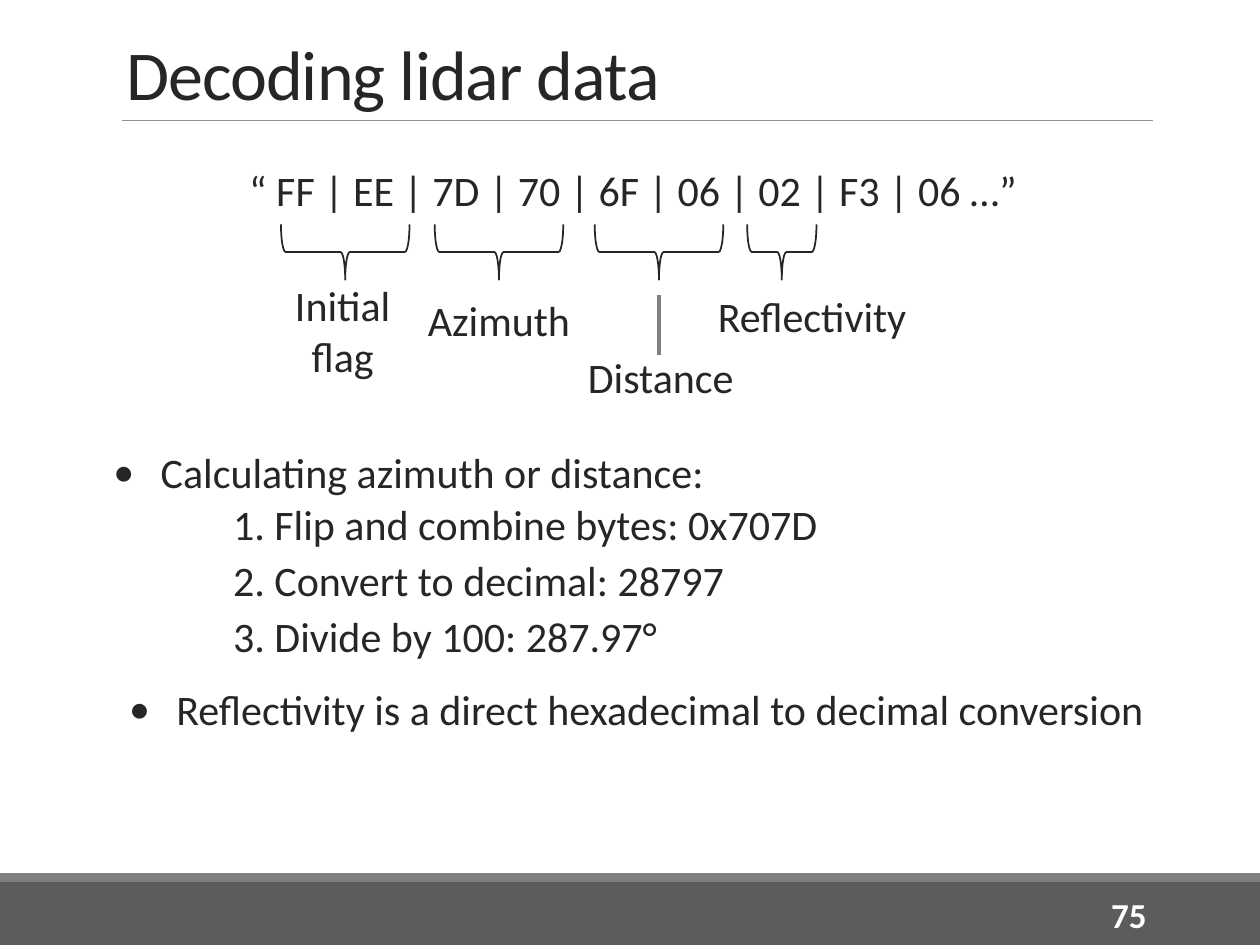
from collections import namedtuple

from lxml import etree
from pptx import Presentation
from pptx.dml.color import RGBColor
from pptx.enum.shapes import MSO_CONNECTOR, MSO_SHAPE
from pptx.enum.text import MSO_ANCHOR, MSO_AUTO_SIZE, PP_ALIGN
from pptx.oxml.ns import qn
from pptx.util import Inches, Pt

STRAIGHT = MSO_CONNECTOR.STRAIGHT
RECTANGLE, BRACE = MSO_SHAPE.RECTANGLE, MSO_SHAPE.LEFT_BRACE
TOP, MIDDLE, BOTTOM = MSO_ANCHOR.TOP, MSO_ANCHOR.MIDDLE, MSO_ANCHOR.BOTTOM
LEFT, CENTER, RIGHT = PP_ALIGN.LEFT, PP_ALIGN.CENTER, PP_ALIGN.RIGHT

COLORS = {"ink": "262626", "bar": "5C5C5C", "stripe": "7F7F7F",
          "rule": "929292", "white": "FFFFFF"}
FONT = "Calibri"
COLUMNS, ROWS = 100, 75  # square cells over the whole slide
CELL = Inches(10) / COLUMNS

Box = namedtuple("Box", "left top width height")


def cells(*counts):
    return [round(count * CELL) for count in counts]


def inside(box, left, top, width, height):
    """Box whose left and top are counted from the corner of another."""
    return Box(box.left + left, box.top + top, width, height)


def color(name):
    return RGBColor.from_string(COLORS[name])


def apply(target, values):
    for name, value in values.items():
        setattr(target, name, value)


def write(para, text, size=24, ink="ink", bold=False, **layout):
    span = para.add_run()
    apply(span, {"text": text})
    apply(span.font, {"name": FONT, "size": Pt(size), "bold": bold})
    span.font.color.rgb = color(ink)
    apply(para, layout)
    return span


def frame_of(shape, **values):
    apply(shape.text_frame, {"word_wrap": True, "auto_size": MSO_AUTO_SIZE.NONE, **values})
    return shape.text_frame


def move(shape, box):
    apply(shape, dict(zip(box._fields, cells(*box))))


def add_text(shapes, box, text, anchor=TOP, **style):
    frame = frame_of(shapes.add_textbox(*cells(*box)), vertical_anchor=anchor)
    write(frame.paragraphs[0], text, **style)


def add_bar(shapes, box, fill):
    bar = shapes.add_shape(RECTANGLE, *cells(*box))
    bar.shadow.inherit = False
    bar.fill.solid()
    bar.fill.fore_color.rgb = color(fill)
    bar.line.fill.background()


def add_line(shapes, box, ink, weight):
    line = shapes.add_connector(STRAIGHT, *cells(
        box.left, box.top, box.left + box.width, box.top + box.height))
    line.line.color.rgb = color(ink)
    line.line.width = Pt(weight)
    etree.SubElement(line._element.spPr, qn("a:effectLst"))


def add_brace(shapes, box):
    """Brace that spans the box's width and points down."""
    middle_x, middle_y = box.left + box.width / 2, box.top + box.height / 2
    brace = shapes.add_shape(BRACE, *cells(
        middle_x - box.height / 2, middle_y - box.width / 2, box.height, box.width))
    brace.rotation = 270
    brace.shadow.inherit = False
    brace.fill.background()
    brace.line.color.rgb = color("ink")
    brace.line.width = Pt(1)


def set_marker(para, tag, margin=0, indent=0, **attributes):
    """Give a paragraph its bullet or number, with the indent in cells."""
    props = para._p.get_or_add_pPr()
    for name, value in zip(("marL", "indent"), cells(margin, indent)):
        props.set(name, str(value))
    if tag == "a:buChar":
        etree.SubElement(props, qn("a:buFont"), typeface=FONT)
    etree.SubElement(props, qn(tag), **attributes)


def fill_title(page, box):
    title = page.shapes.title
    move(title, box)
    para = frame_of(title, vertical_anchor=BOTTOM).paragraphs[0]
    span = write(para, "Decoding lidar data", size=40, alignment=LEFT, line_spacing=0.85)
    span.font._element.set("spc", "-50")
    add_line(page.shapes, inside(box, 0.7, box.height, 81.8, 0), "rule", 0.5)


def fill_body(page, box):
    body = page.placeholders[1]
    move(body, box)
    frame = frame_of(body, vertical_anchor=TOP, margin_left=0, margin_right=0)
    main = {"alignment": LEFT, "space_before": Pt(12), "space_after": Pt(2)}
    # The first bullet leaves room for the byte diagram above it.
    below_diagram = {**main, "space_before": Pt(133)}
    step = {"alignment": LEFT, "level": 4, "space_before": Pt(2), "space_after": Pt(4)}
    dot = {"tag": "a:buChar", "indent": -3.75, "char": "•"}
    number = {"tag": "a:buAutoNum", "margin": 11.5, "indent": -2, "type": "arabicPeriod"}
    lines = [
        ("“ FF | EE | 7D | 70 | 6F | 06 | 02 | F3 | 06 …”",
         {**main, "alignment": CENTER}, {"tag": "a:buNone"}),
        ("Calculating azimuth or distance:", below_diagram, {**dot, "margin": 3.75}),
        (" Flip and combine bytes: 0x707D", step, number),
        (" Convert to decimal: 28797", step, number),
        (" Divide by 100: 287.97°", step, number),
        ("Reflectivity is a direct hexadecimal to decimal conversion",
         main, {**dot, "margin": 5}),
    ]
    for index, (text, layout, marker) in enumerate(lines):
        para = frame.add_paragraph() if index else frame.paragraphs[0]
        write(para, text, line_spacing=0.9, **layout)
        set_marker(para, **marker)


def add_byte_diagram(page, box):
    """Braces under the byte string, each with the name of its field."""
    shapes = page.shapes.add_group_shape().shapes
    fields = [  # brace left and width, then the label's place
        ("Initial flag", 0.6, 10.2, (0, 3.9, 11, 9.1)),
        ("Azimuth", 12.8, 10.2, (11.2, 5.1, 13.4, 5)),
        ("Distance", 25.5, 10.2, (23.6, 9.6, 14.3, 5)),
        ("Reflectivity", 37.6, 5.5, (33.8, 4.8, 17.9, 5)),
    ]
    for name, left, width, label in fields:
        add_brace(shapes, inside(box, left, 0, width, 4.4))
        add_text(shapes, inside(box, *label), name, alignment=CENTER)
    add_line(shapes, inside(box, 30.6, 5.6, 0, 4.8), "stripe", 2)


def add_footer(page, box):
    add_bar(page.shapes, inside(box, 0, 0.7, box.width, box.height - 0.7), "bar")
    add_bar(page.shapes, inside(box, 0, 0, box.width, 0.7), "stripe")
    add_text(page.shapes, inside(box, 81.2, 1.3, 10.8, 4), "75", anchor=MIDDLE,
             size=20, ink="white", bold=True, alignment=RIGHT)


def main():
    deck = Presentation()
    deck.slide_width, deck.slide_height = cells(COLUMNS, ROWS)
    page = deck.slides.add_slide(deck.slide_layouts[1])
    add_footer(page, Box(0, 69.3, COLUMNS, 5.7))
    fill_title(page, Box(9, 2.3, 82.5, 7.3))
    fill_body(page, Box(9, 13, 82.5, 53.6))
    add_byte_diagram(page, Box(21.7, 17.8, 51.7, 14.6))
    deck.save("out.pptx")


if __name__ == "__main__":
    main()
